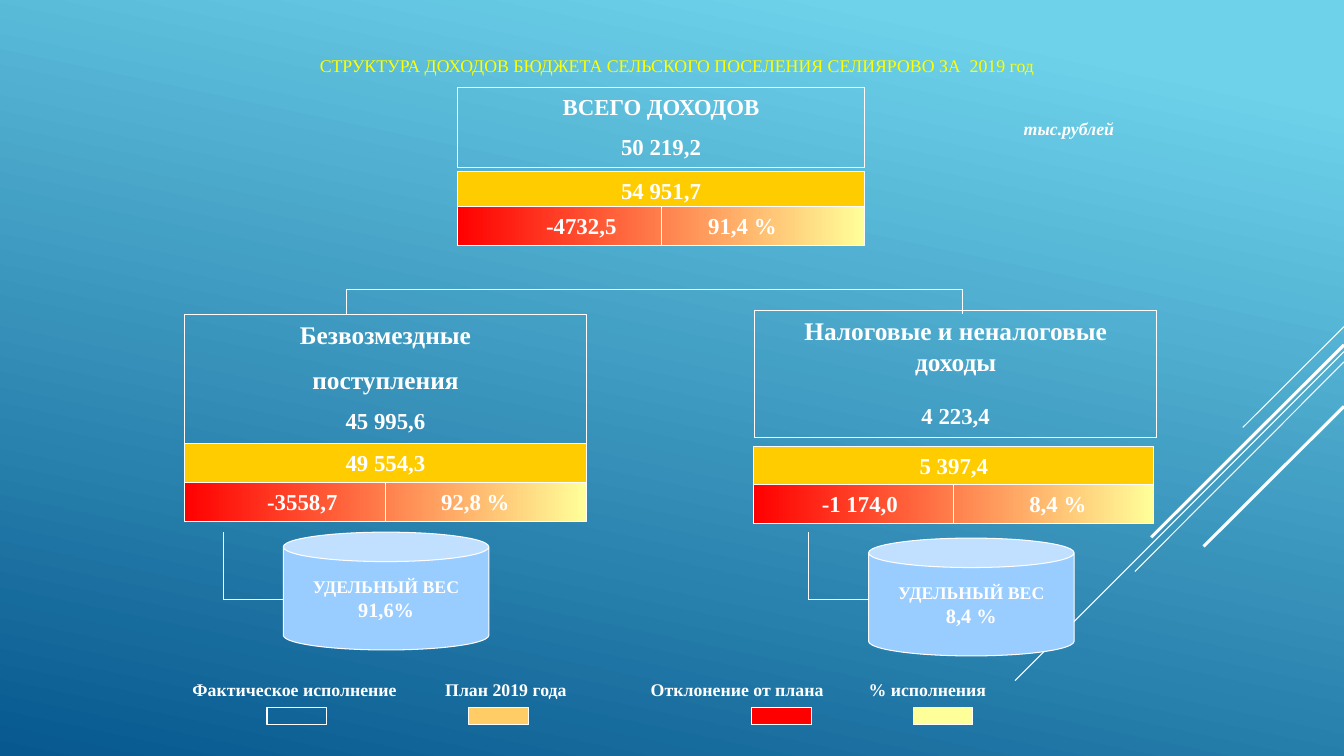
from dataclasses import dataclass

import pptx
import pptx.dml.color
import pptx.enum.shapes
import pptx.enum.text
import pptx.oxml
import pptx.oxml.ns
import pptx.util

Cm, Pt = pptx.util.Cm, pptx.util.Pt
KIND = pptx.enum.shapes.MSO_SHAPE
ALIGN = pptx.enum.text.PP_ALIGN
ANCHOR = pptx.enum.text.MSO_ANCHOR
HUES = {"white": "FFFFFF", "title": "FFFF00", "gold": "FFCC00", "plan": "FFCC66", "red": "FF0000",
        "pale": "FFFF99", "can": "99CCFF", "sky": "6ED2EB", "deep": "06588E"}
SMALL, SHARE, SUM, HEAD = 12.7, 14.5, 16.3, 18.1
ROW = 0.97


@dataclass
class Box:
    left: float
    top: float
    width: float
    height: float


@dataclass
class Line:
    text: str
    size: float
    gap: float = 0
    hue: str = "white"
    bold: bool = True
    slant: bool = False


@dataclass
class Panel:
    head: Box
    lines: list[Line]
    gold: Box
    plan: str
    bar: Box
    pair: list[str]
    tabs: list[float]


@dataclass
class Drum:
    box: Box
    share: str
    stem: float


def tint(name: str) -> pptx.dml.color.RGBColor:
    return pptx.dml.color.RGBColor.from_string(HUES[name])


def place(box: Box) -> list:
    return [Cm(box.left), Cm(box.top), Cm(box.width), Cm(box.height)]


def blend(fill, angle: float, stops: list[tuple[float, str]]) -> None:
    fill.gradient()
    fill.gradient_angle = angle
    for stop, (spot, hue) in zip(fill.gradient_stops, stops):
        stop.position = spot
        stop.color.rgb = tint(hue)


def write(shape, lines: list[Line], align=ALIGN.CENTER, anchor=ANCHOR.TOP, wrap: bool = True) -> None:
    frame = shape.text_frame
    frame.word_wrap = wrap
    frame.auto_size = pptx.enum.text.MSO_AUTO_SIZE.NONE
    frame.vertical_anchor = anchor
    for i, line in enumerate(lines):
        para = frame.add_paragraph() if i else frame.paragraphs[0]
        para.alignment = align
        if line.gap:
            para.space_before = Pt(line.gap)
        run = para.add_run()
        run.text = line.text
        font = run.font
        font.name, font.size = "Times New Roman", Pt(line.size)
        font.bold, font.italic = line.bold, line.slant
        font.color.rgb = tint(line.hue)


def write_tabs(shape, parts: list[str], size: float, tabs: list[float], kind: str) -> None:
    write(shape, [Line("".join("\t" + part for part in parts), size)], ALIGN.LEFT)
    props = shape.text_frame.paragraphs[0]._p.get_or_add_pPr()
    stops = pptx.oxml.ns.qn("a:tabLst"), pptx.oxml.ns.qn("a:tab")
    group = props.makeelement(stops[0], {})
    props.append(group)
    for tab in tabs:
        group.append(group.makeelement(stops[1], {"pos": str(int(Cm(tab))), "algn": kind}))


def draw(slide, box: Box, hue: str = "", kind=KIND.RECTANGLE):
    shape = slide.shapes.add_shape(kind, *place(box))
    shape.shadow.inherit = False
    if hue:
        shape.fill.solid()
        shape.fill.fore_color.rgb = tint(hue)
    else:
        shape.fill.background()
    shape.line.color.rgb = tint("white")
    shape.line.width = Pt(0.75)
    return shape


def rule(slide, x1: float, y1: float, x2: float, y2: float, width: float = 0.75) -> None:
    line = slide.shapes.add_connector(pptx.enum.shapes.MSO_CONNECTOR.STRAIGHT, Cm(x1), Cm(y1), Cm(x2), Cm(y2))
    line.line.color.rgb = tint("white")
    line.line.width = Pt(width)
    props = line._element.spPr
    props.append(props.makeelement(pptx.oxml.ns.qn("a:effectLst"), {}))


def draw_panel(slide, panel: Panel) -> None:
    write(draw(slide, panel.head), panel.lines)
    write(draw(slide, panel.gold, "gold"), [Line(panel.plan, SUM)])
    bar = draw(slide, panel.bar)
    blend(bar.fill, 0, [(0, "red"), (1, "pale")])
    write_tabs(bar, panel.pair, SUM, panel.tabs, "ctr")
    mid = panel.bar.left + panel.bar.width / 2
    rule(slide, mid, panel.bar.top, mid, panel.bar.top + panel.bar.height)


def draw_drum(slide, drum: Drum) -> None:
    write(draw(slide, drum.box, "can", KIND.CAN), [Line("УДЕЛЬНЫЙ ВЕС", SMALL), Line(drum.share, SHARE)],
          anchor=ANCHOR.MIDDLE, wrap=False)
    rule(slide, drum.stem, 13.41, drum.stem, 15.11)
    rule(slide, drum.stem, 15.11, drum.box.left, 15.11)


STREAKS = [(8.23, 31.32, 10.77, 0.75), (8.86, 25.58, 17.15, 0.75), (9.12, 28.6, 14.4, 0.75),
           (8.69, 29.01, 13.54, 2.25), (10.24, 30.33, 13.77, 2.25)]
PANELS = [
    Panel(Box(11.53, 2.21, 10.26, 2.01), [Line("ВСЕГО ДОХОДОВ", SUM), Line("50 219,2", SUM, 9)],
          Box(11.53, 4.32, 10.26, ROW), "54 951,7",
          Box(11.53, 5.21, 10.26, ROW), ["-4732,5", "91,4 %"], [2.87, 6.93]),
    Panel(Box(4.65, 7.92, 10.13, 3.25),
          [Line("Безвозмездные", HEAD), Line("поступления", HEAD, 10), Line("45 995,6", SUM, 9)],
          Box(4.65, 11.18, 10.13, ROW), "49 554,3",
          Box(4.65, 12.17, 10.13, ROW), ["-3558,7", "92,8 %"], [2.72, 7.08]),
    Panel(Box(19.02, 7.82, 10.13, 3.2), [Line("Налоговые и неналоговые доходы", HEAD), Line("4 223,4", SUM, 18)],
          Box(19, 11.25, 10.08, ROW), "5 397,4",
          Box(19, 12.22, 10.08, ROW), ["-1 174,0", "8,4 %"], [2.42, 7.41]),
]
DRUMS = [Drum(Box(7.14, 13.41, 5.18, 2.97), "91,6%", 5.64), Drum(Box(21.89, 13.56, 5.18, 2.97), "8,4 %", 20.37)]
LEGEND = ["Фактическое исполнение", "План 2019 года", "Отклонение от плана", "% исполнения"]
KEYS = [(6.73, ""), (11.81, "plan"), (18.95, "red"), (23.01, "pale")]


def main() -> None:
    """Build the slide on the income structure of the village budget."""
    deck = pptx.Presentation()
    deck.slide_width, deck.slide_height = Cm(33.87), Cm(19.05)
    slide = deck.slides.add_slide(deck.slide_layouts[5])
    blend(slide.background.fill, 258, [(0.1, "sky"), (1, "deep")])
    for top, x, y, width in STREAKS:
        rule(slide, 33.87, top, x, y, width)

    title = slide.shapes.title
    title.left, title.top, title.width, title.height = place(Box(5.21, 1.24, 23.72, 0.81))
    write(title, [Line("СТРУКТУРА ДОХОДОВ БЮДЖЕТА СЕЛЬСКОГО ПОСЕЛЕНИЯ СЕЛИЯРОВО ЗА  2019 год",
                       SMALL, hue="title", bold=False)])
    unit = slide.shapes.add_textbox(*place(Box(25.55, 2.84, 3.38, 0.81)))
    write(unit, [Line("тыс.рублей", SMALL, slant=True)], ALIGN.LEFT)

    for panel in PANELS:
        draw_panel(slide, panel)
    rule(slide, 8.74, 7.29, 24.26, 7.29)
    for x in (8.74, 24.26):
        rule(slide, x, 7.29, x, 7.92)
    for drum in DRUMS:
        draw_drum(slide, drum)

    legend = slide.shapes.add_textbox(*place(Box(4.14, 16.97, 24.71, 0.81)))
    write_tabs(legend, LEGEND, SMALL, [0.46, 6.83, 12.01, 17.5], "l")
    for left, hue in KEYS:
        draw(slide, Box(left, 17.83, 1.5, 0.43), hue)
    deck.save("out.pptx")


if __name__ == "__main__":
    main()
